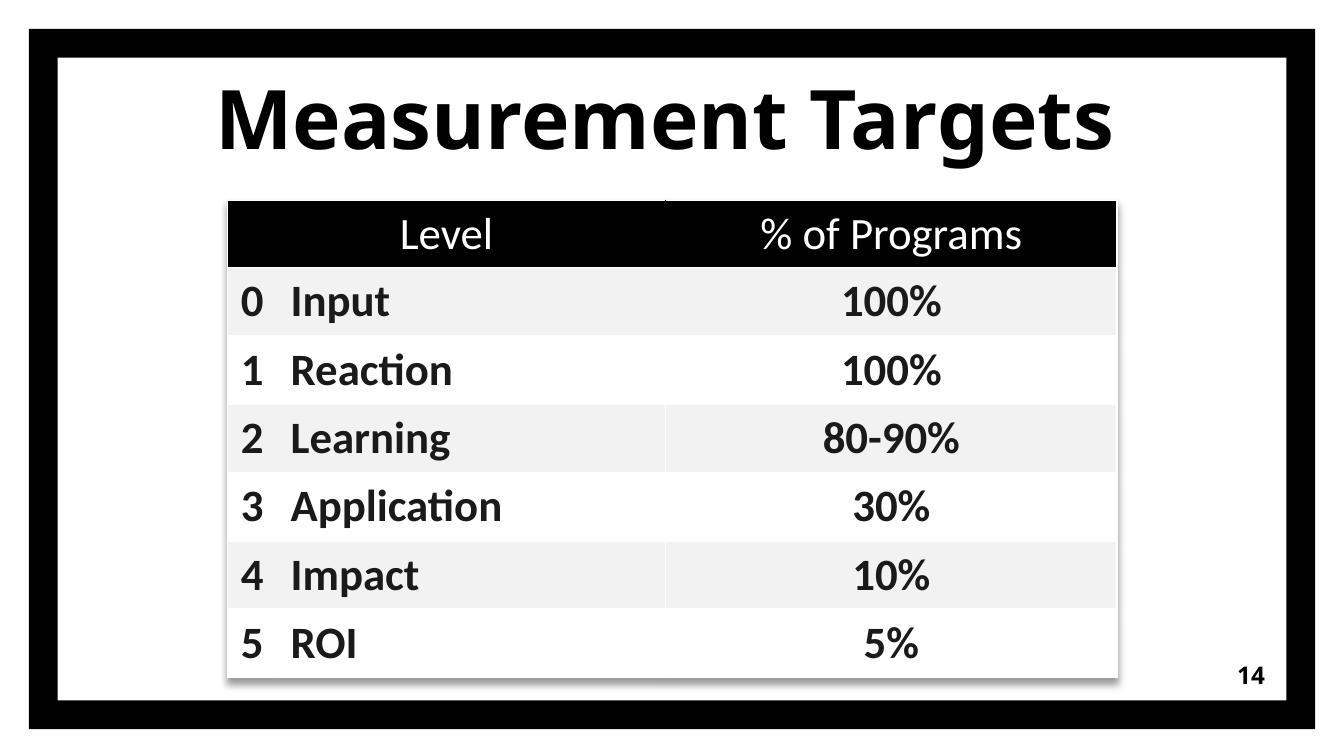
from lxml import etree
from pptx import Presentation
from pptx import util as u
from pptx.dml.color import RGBColor
from pptx.enum import shapes, text
from pptx.oxml import parse_xml
from pptx.oxml.ns import nsdecls, qn

COLORS = {"black": "000000", "white": "FFFFFF", "band": "F2F2F2", "ink": "1A1A1A"}
LEVELS = [
    ("0", "Input", "100%"),
    ("1", "Reaction", "100%"),
    ("2", "Learning", "80-90%"),
    ("3", "Application", "30%"),
    ("4", "Impact", "10%"),
    ("5", "ROI", "5%"),
]
CENTER = text.PP_ALIGN.CENTER

prs = Presentation()
prs.slide_width, prs.slide_height = u.Inches(10), u.Inches(10 * 9 / 16)
slide = prs.slides.add_slide(prs.slide_layouts[6])


def box(left, top, width, height):
    """Turn percentages of the slide's size into lengths."""
    sides = (prs.slide_width, prs.slide_height) * 2
    return [int(side * share / 100) for side, share in zip(sides, (left, top, width, height))]


def write(tf, content, size=24, font="Calibri", color="black", bold=True, align=None):
    p = tf.paragraphs[0]
    p.alignment = align
    r = p.add_run()
    r.text = content
    r.font.size, r.font.name, r.font.bold = u.Pt(size), font, bold
    r.font.color.rgb = RGBColor.from_string(COLORS[color])


# Frame
sp = slide.shapes.add_shape(shapes.MSO_SHAPE.FRAME, *box(2.16, 3.84, 95.7, 92.6))
sp.adjustments[0] = 0.041
sp.shadow.inherit = False
sp.fill.solid()
sp.fill.fore_color.rgb = RGBColor.from_string(COLORS["black"])
sp.line.fill.background()

# Title and slide number
for content, place, size, align, anchor in [
    ("Measurement Targets", (6.83, 10.7, 85.3, 13), 44, CENTER, text.MSO_ANCHOR.BOTTOM),
    ("14", (89.1, 85.4, 6, 7.8), 13, text.PP_ALIGN.RIGHT, text.MSO_ANCHOR.MIDDLE),
]:
    tf = slide.shapes.add_textbox(*box(*place)).text_frame
    tf.word_wrap = True
    tf.vertical_anchor = anchor
    tf.margin_left = tf.margin_top = tf.margin_right = tf.margin_bottom = u.Inches(0.1)
    write(tf, content, size, "Noto Sans", align=align)

# Table with a soft shadow and no built-in style
rows = [("Level", "", "% of Programs")] + LEVELS
table = slide.shapes.add_table(len(rows), 3, *box(16.93, 26.5, 66.2, 62.8)).table
table.first_row = table.horz_banding = False
for column, width in zip(table.columns, (0.37, 2.89, 3.36)):
    column.width = u.Inches(width)
for i, table_row in enumerate(table.rows):
    table_row.height = u.Inches((3.53 - 0.48) / len(LEVELS) if i else 0.48)
tbl_pr = table.columns[0]._gridCol.getparent().getparent().find(qn("a:tblPr"))
tbl_pr.find(qn("a:tableStyleId")).text = "{2D5ABB26-0587-4C30-8999-92F81FD0307C}"
tbl_pr.insert(0, parse_xml(
    f'<a:effectLst {nsdecls("a")}><a:outerShdw blurRad="50800" dist="38100" dir="5400000">'
    '<a:srgbClr val="000000"><a:alpha val="40000"/></a:srgbClr></a:outerShdw></a:effectLst>'))
table.cell(0, 0).merge(table.cell(0, 1))

for i, row in enumerate(rows):
    fill = "black" if i == 0 else "band" if i % 2 else "white"
    divider = "black" if i == 0 else "white"
    for j, content in enumerate(row):
        cell = table.cell(i, j)
        borders = {"lnT": "white", "lnB": "white"}
        if j == 0:
            borders["lnL"] = "white"
        if j == 1 and i != 1:
            borders["lnR"] = divider
        if j == 2:
            borders["lnR"] = "white"
            if i != 1:
                borders["lnL"] = divider
        tc_pr = cell._tc.get_or_add_tcPr()
        for side in ("lnL", "lnR", "lnT", "lnB"):
            if side in borders:
                ln = etree.SubElement(tc_pr, qn(f"a:{side}"), w=str(u.Pt(1)))
                solid = etree.SubElement(ln, qn("a:solidFill"))
                etree.SubElement(solid, qn("a:srgbClr"), val=COLORS[borders[side]])
        cell.fill.solid()
        cell.fill.fore_color.rgb = RGBColor.from_string(COLORS[fill])
        cell.vertical_anchor = text.MSO_ANCHOR.MIDDLE
        if content:
            write(cell.text_frame, content, color="ink" if i else "white", bold=i > 0,
                  align=CENTER if i == 0 or j == 2 else None)

prs.save("out.pptx")
